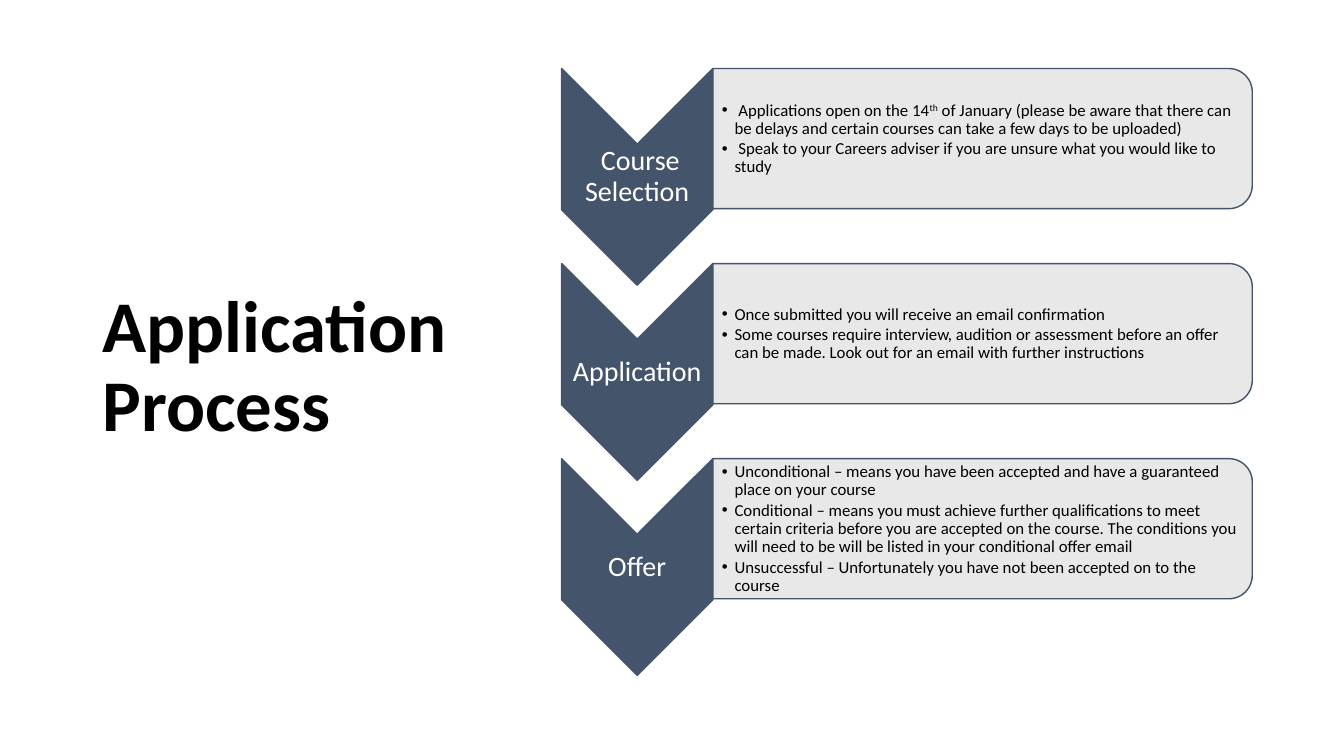
from lxml import etree
from pptx import Presentation
from pptx import util as u
from pptx.dml.color import RGBColor
from pptx.enum import shapes, text
from pptx.oxml.ns import qn

FONT = "Calibri"
SLATE, PALE, BLACK, WHITE = "44546A", "E7E6E6", "000000", "FFFFFF"

# Columns and rows of the process diagram, in inches
STEP_LEFT, STEP_WIDTH, STEP_HEIGHT = 5.57, 1.5, 2.15
PANEL_LEFT, PANEL_WIDTH, PANEL_HEIGHT = STEP_LEFT + STEP_WIDTH, 5.35, 1.39
FIRST_TOP, PITCH = 0.68, 1.935

# Text between carets is superscript
STEPS = [
    (" Course Selection", [
        " Applications open on the 14^th^ of January (please be aware that there can "
        "be delays and certain courses can take a few days to be uploaded)",
        " Speak to your Careers adviser if you are unsure what you would like to study",
    ]),
    ("Application", [
        "Once submitted you will receive an email confirmation",
        "Some courses require interview, audition or assessment before an offer can "
        "be made. Look out for an email with further instructions",
    ]),
    ("Offer", [
        "Unconditional – means you have been accepted and have a guaranteed place on "
        "your course",
        "Conditional – means you must achieve further qualifications to meet certain "
        "criteria before you are accepted on the course. The conditions you will need "
        "to be will be listed in your conditional offer email",
        "Unsuccessful – Unfortunately you have not been accepted on to the course",
    ]),
]


def color(hex_code):
    return RGBColor.from_string(hex_code)


def add_turned_shape(slide, preset, left, top, width, height, fill, opacity=100):
    """Add a preset turned 90° so that it covers the given box."""
    shape = slide.shapes.add_shape(
        preset,
        u.Inches(left + (width - height) / 2), u.Inches(top + (height - width) / 2),
        u.Inches(height), u.Inches(width))
    shape.rotation = 90
    shape.shadow.inherit = False
    shape.fill.solid()
    shape.fill.fore_color.rgb = color(fill)
    if opacity < 100:
        tint = shape.fill._xPr.find(".//" + qn("a:srgbClr"))
        etree.SubElement(tint, qn("a:alpha"), val=str(opacity * 1000))
    shape.line.color.rgb = color(SLATE)
    shape.line.width = u.Pt(1)


def add_text(slide, box, lines, size, ink, bold=False, centered=False,
             bulleted=False, insets=None):
    frame = slide.shapes.add_textbox(*map(u.Inches, box)).text_frame
    frame.word_wrap = True
    frame.vertical_anchor = text.MSO_ANCHOR.MIDDLE
    if insets:
        (frame.margin_left, frame.margin_top,
         frame.margin_right, frame.margin_bottom) = map(u.Inches, insets)
    for index, line in enumerate(lines):
        paragraph = frame.add_paragraph() if index else frame.paragraphs[0]
        paragraph.line_spacing = 0.9
        if centered:
            paragraph.alignment = text.PP_ALIGN.CENTER
        if bulleted:
            paragraph.space_after = u.Pt(size * 0.15)
            add_bullet(paragraph)
        font = paragraph.font
        font.name, font.size, font.bold = FONT, u.Pt(size), bold
        font.color.rgb = color(ink)
        for part, words in enumerate(line.split("^")):
            run = paragraph.add_run()
            run.text = words
            if part % 2:
                run._r.get_or_add_rPr().set("baseline", "30000")


def add_bullet(paragraph):
    properties = paragraph._p.get_or_add_pPr()
    hang = u.Inches(0.125)
    properties.set("marL", str(hang))
    properties.set("indent", str(-hang))
    etree.SubElement(properties, qn("a:buFont"), typeface="Arial")
    etree.SubElement(properties, qn("a:buChar"), char="•")


def add_step(slide, top, label, details):
    add_turned_shape(slide, shapes.MSO_SHAPE.CHEVRON,
                     STEP_LEFT, top, STEP_WIDTH, STEP_HEIGHT, SLATE)
    add_text(slide, (STEP_LEFT, top + STEP_WIDTH / 2, STEP_WIDTH,
                     STEP_HEIGHT - STEP_WIDTH),
             [label], 20, WHITE, centered=True, insets=[0.01] * 4)
    add_turned_shape(slide, shapes.MSO_SHAPE.ROUND_2_SAME_RECTANGLE,
                     PANEL_LEFT, top, PANEL_WIDTH, PANEL_HEIGHT, PALE, opacity=90)
    add_text(slide, (PANEL_LEFT, top + 0.07, PANEL_WIDTH - 0.07, PANEL_HEIGHT - 0.13),
             details, 12, BLACK, bulleted=True, insets=(0.09, 0.01, 0.01, 0.01))


def main():
    deck = Presentation()
    deck.slide_width, deck.slide_height = u.Inches(13.33), u.Inches(7.5)
    slide = deck.slides.add_slide(deck.slide_layouts[6])
    add_text(slide, (0.92, 0.61, 3.69, 6.09), ["Application Process"], 52, BLACK,
             bold=True)
    for row, (label, details) in enumerate(STEPS):
        add_step(slide, FIRST_TOP + row * PITCH, label, details)
    deck.save("out.pptx")


if __name__ == "__main__":
    main()
